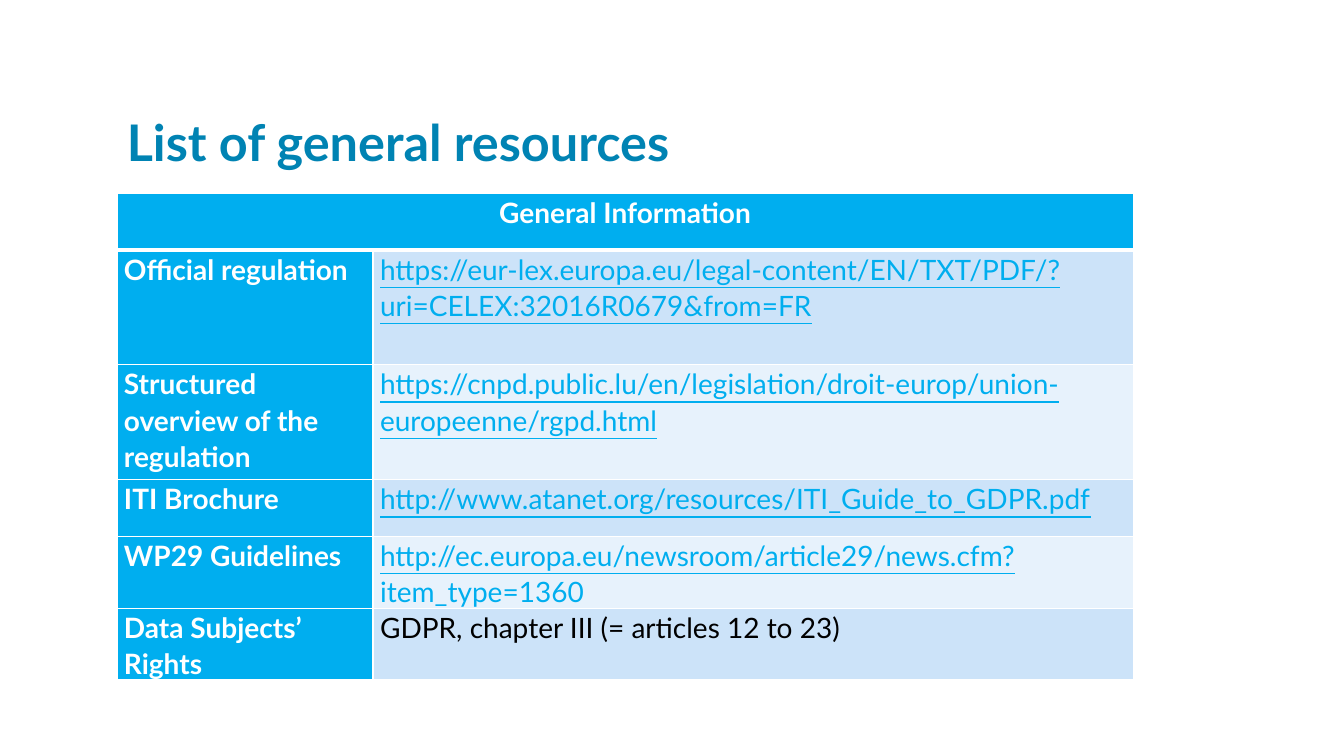
"""Build the slide listing general GDPR resources."""
from lxml import etree
from pptx import Presentation
from pptx.dml.color import RGBColor
from pptx.enum.text import MSO_ANCHOR, PP_ALIGN
from pptx.oxml.ns import qn
from pptx.util import Inches, Pt

LEFT, CENTER = PP_ALIGN.LEFT, PP_ALIGN.CENTER
BOTTOM = MSO_ANCHOR.BOTTOM
COLORS = {
    "title": "0083B3",
    "accent": "00AEEF",
    "band_dark": "CCE3F9",
    "band_light": "E7F2FC",
    "white": "FFFFFF",
    "black": "000000",
}


def write(frame, text, size=20, color="white", bold=False, underline=False,
          align=LEFT, spacing=1.07):
    frame.word_wrap = True
    paragraph = frame.paragraphs[0]
    paragraph.alignment = align
    paragraph.line_spacing = spacing
    run = paragraph.add_run()
    run.text = text
    run.font.name = "Lato"
    run.font.size = Pt(size)
    run.font.bold = bold
    run.font.underline = underline
    run.font.color.rgb = RGBColor.from_string(COLORS[color])


def style_cell(cell, fill, top=1, bottom=1):
    cell.margin_left = cell.margin_right = Inches(0.07)
    cell.margin_top = cell.margin_bottom = 0
    properties = cell._tc.get_or_add_tcPr()
    for side, width in (("L", 1), ("R", 1), ("T", top), ("B", bottom)):
        border = etree.SubElement(properties, qn(f"a:ln{side}"), w=str(Pt(width)))
        solid = etree.SubElement(border, qn("a:solidFill"))
        etree.SubElement(solid, qn("a:srgbClr"), val=COLORS["white"])
    cell.fill.solid()
    cell.fill.fore_color.rgb = RGBColor.from_string(COLORS[fill])


prs = Presentation()
prs.slide_width, prs.slide_height = Inches(13.33), Inches(7.5)
slide = prs.slides.add_slide(prs.slide_layouts[6])

title = slide.shapes.add_textbox(Inches(1.16), Inches(0.58), Inches(9.5), Inches(1.17)).text_frame
title.vertical_anchor = BOTTOM
write(title, "List of general resources", size=36, color="title", bold=True, spacing=0.8)

resources = [
    ("Official regulation",
     "https://eur-lex.europa.eu/legal-content/EN/TXT/PDF/?uri=CELEX:32016R0679&from=FR"),
    ("Structured overview of the regulation",
     "https://cnpd.public.lu/en/legislation/droit-europ/union-europeenne/rgpd.html"),
    ("ITI Brochure", "http://www.atanet.org/resources/ITI_Guide_to_GDPR.pdf"),
    ("WP29 Guidelines", "http://ec.europa.eu/newsroom/article29/news.cfm?item_type=1360"),
    ("Data Subjects’ Rights", "GDPR, chapter III (= articles 12 to 23)"),
]
column_widths = [2.54, 7.54]
row_heights = [0.56, 1.14, 1.14, 0.56, 0.56, 0.56]

overview = slide.shapes.add_table(
    len(row_heights), len(column_widths), Inches(1.16), Inches(1.92),
    Inches(sum(column_widths)), Inches(sum(row_heights))).table
overview.horz_banding = False
for column, width in zip(overview.columns, column_widths):
    column.width = Inches(width)
for row, height in zip(overview.rows, row_heights):
    row.height = Inches(height)

heading = overview.cell(0, 0)
heading.merge(overview.cell(0, 1))
for heading_part in overview.rows[0].cells:
    style_cell(heading_part, "accent", bottom=3)
write(heading.text_frame, "General Information", bold=True, align=CENTER)

for number, (topic, source) in enumerate(resources, start=1):
    topic_cell, source_cell = overview.rows[number].cells
    top = 3 if number == 1 else 1
    style_cell(topic_cell, "accent", top=top)
    style_cell(source_cell, "band_dark" if number % 2 else "band_light", top=top)
    write(topic_cell.text_frame, topic, bold=True)
    is_link = source.startswith("http")
    write(source_cell.text_frame, source, color="accent" if is_link else "black",
          underline=is_link)

prs.save("out.pptx")
